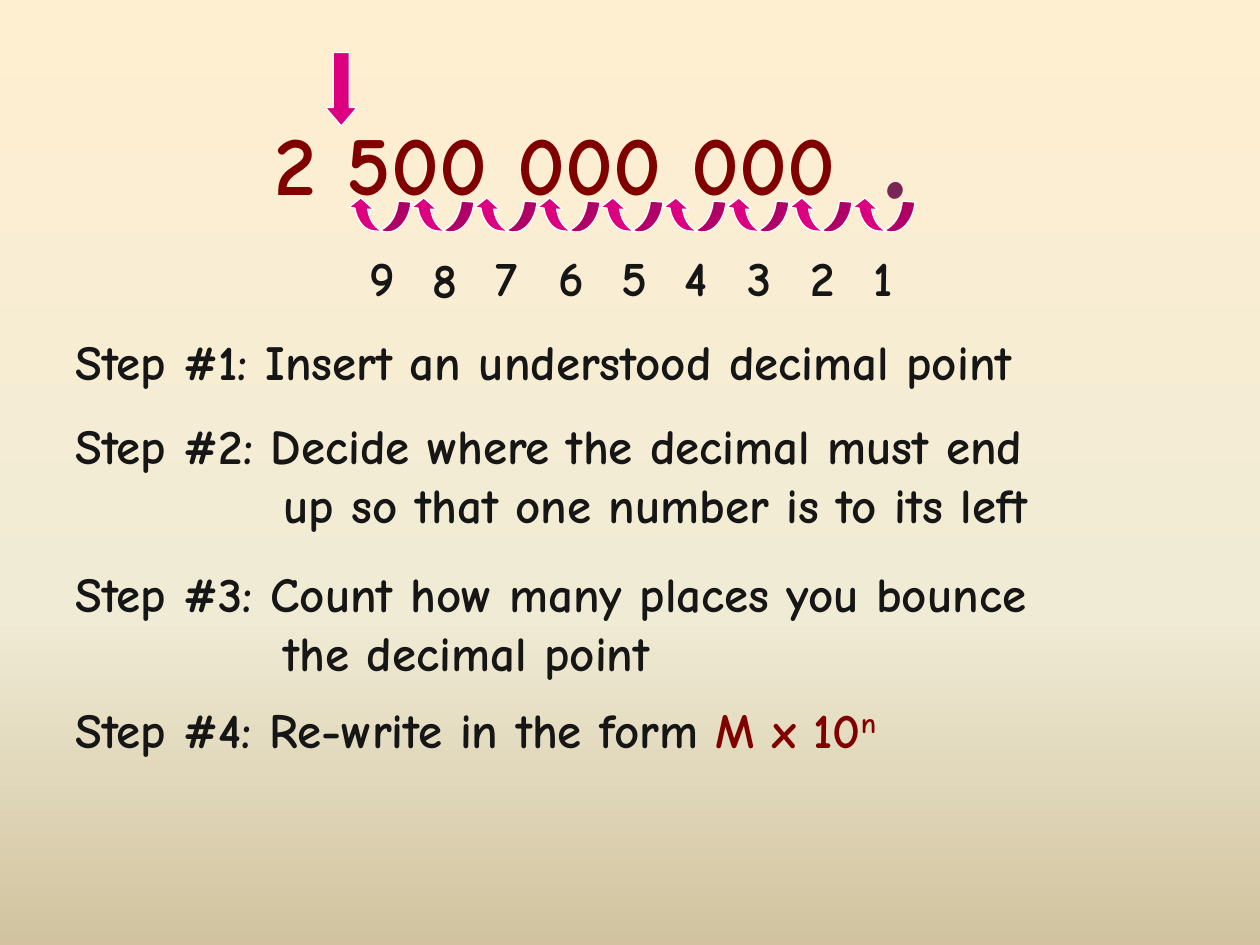
from copy import deepcopy

from pptx import Presentation
from pptx import util as u
from pptx.dml.color import RGBColor
from pptx.enum import shapes, text
from pptx.oxml import ns

FONT = "Comic Neue"
INK = RGBColor(0x16, 0x16, 0x16)
MAROON = RGBColor(0x80, 0x00, 0x00)
PLUM = RGBColor(0x77, 0x26, 0x55)
PINK = RGBColor(0xDC, 0x00, 0x81)
WHITE = RGBColor(0xFF, 0xFF, 0xFF)
BACKGROUND = [
    (0, RGBColor(0xFF, 0xEF, 0xD1)),
    (0.65, RGBColor(0xF0, 0xEB, 0xD5)),
    (1, RGBColor(0xD1, 0xC3, 0x9F)),
]

LEFT = 1.27
HOP = 1.27
PLACES = 9
STEPS = [
    (6.55, 1.45, ["Step #1: Insert an understood decimal point"]),
    (8.26, 2.62, ["Step #2: Decide where the decimal must end",
                  "up so that one number is to its left"]),
    (11.23, 2.62, ["Step #3: Count how many places you bounce",
                   "the decimal point"]),
    (13.97, 1.45, ["Step #4: Re-write in the form "]),
]


def paint_background(slide):
    fill = slide.background.fill
    fill.gradient()
    fill.gradient_angle = 270
    stop_list = slide.element.find(".//" + ns.qn("a:gsLst"))
    stop_list.append(deepcopy(stop_list[-1]))
    for stop, (position, color) in zip(fill.gradient_stops, BACKGROUND):
        stop.position = position
        stop.color.rgb = color


def add_words(paragraph, words, size=28, color=INK):
    run = paragraph.add_run()
    run.text = words
    run.font.name = FONT
    run.font.size = u.Pt(size)
    run.font.bold = True
    run.font.color.rgb = color
    return run


def add_lines(slide, left, top, width, height, lines, size=28, color=INK):
    frame = slide.shapes.add_textbox(
        u.Cm(left), u.Cm(top), u.Cm(width), u.Cm(height)).text_frame
    frame.word_wrap = True
    frame.auto_size = text.MSO_AUTO_SIZE.SHAPE_TO_FIT_TEXT
    for index, line in enumerate(lines):
        paragraph = frame.paragraphs[0]
        if index:
            paragraph = frame.add_paragraph()
            paragraph._p.get_or_add_pPr().set("marL", str(u.Cm(4.2)))
        add_words(paragraph, line, size, color)
    return frame


def add_arrow(slide, kind, left, top, width, height, adjustments, rotation=0):
    arrow = slide.shapes.add_shape(
        kind, u.Cm(left), u.Cm(top), u.Cm(width), u.Cm(height))
    arrow.shadow.inherit = False
    arrow.rotation = rotation
    for index, value in enumerate(adjustments):
        arrow.adjustments[index] = value
    arrow.fill.solid()
    arrow.fill.fore_color.rgb = PINK
    arrow.line.color.rgb = WHITE
    arrow.line.width = u.Pt(0.75)


def add_hop(slide, place):
    offset = (PLACES - place) * HOP
    add_arrow(slide, shapes.MSO_SHAPE.CURVED_DOWN_ARROW,
              6.99 + offset, 4.02, HOP, 0.64, (0.4, 0.8, 0.333), 184.8)
    drop = 0.03 if place == 8 else 0
    add_lines(slide, 7.2 + offset, 4.87 + drop, 1.06, 1.45, [str(place)])


def main():
    deck = Presentation()
    deck.slide_width = u.Cm(25.4)
    deck.slide_height = u.Cm(19.05)
    slide = deck.slides.add_slide(deck.slide_layouts[6])
    paint_background(slide)

    add_lines(slide, 5.29, 2.12, 15.29, 2.29, ["2 500 000 000"], 48, MAROON)
    add_lines(slide, 17.57, 1.06, 1.7, 3.64, ["."], 80, PLUM)
    add_arrow(slide, shapes.MSO_SHAPE.DOWN_ARROW,
              6.56, 1.06, 0.64, 1.48, (0.5, 0.583))
    for place in range(1, PLACES + 1):
        add_hop(slide, place)

    for top, height, lines in STEPS:
        step = add_lines(slide, LEFT, top, 23.06, height, lines)
    add_words(step.paragraphs[0], "M x 10", color=MAROON)
    exponent = add_words(step.paragraphs[0], "n", color=MAROON)
    exponent.font._element.set("baseline", "30000")

    deck.save("out.pptx")


if __name__ == "__main__":
    main()
